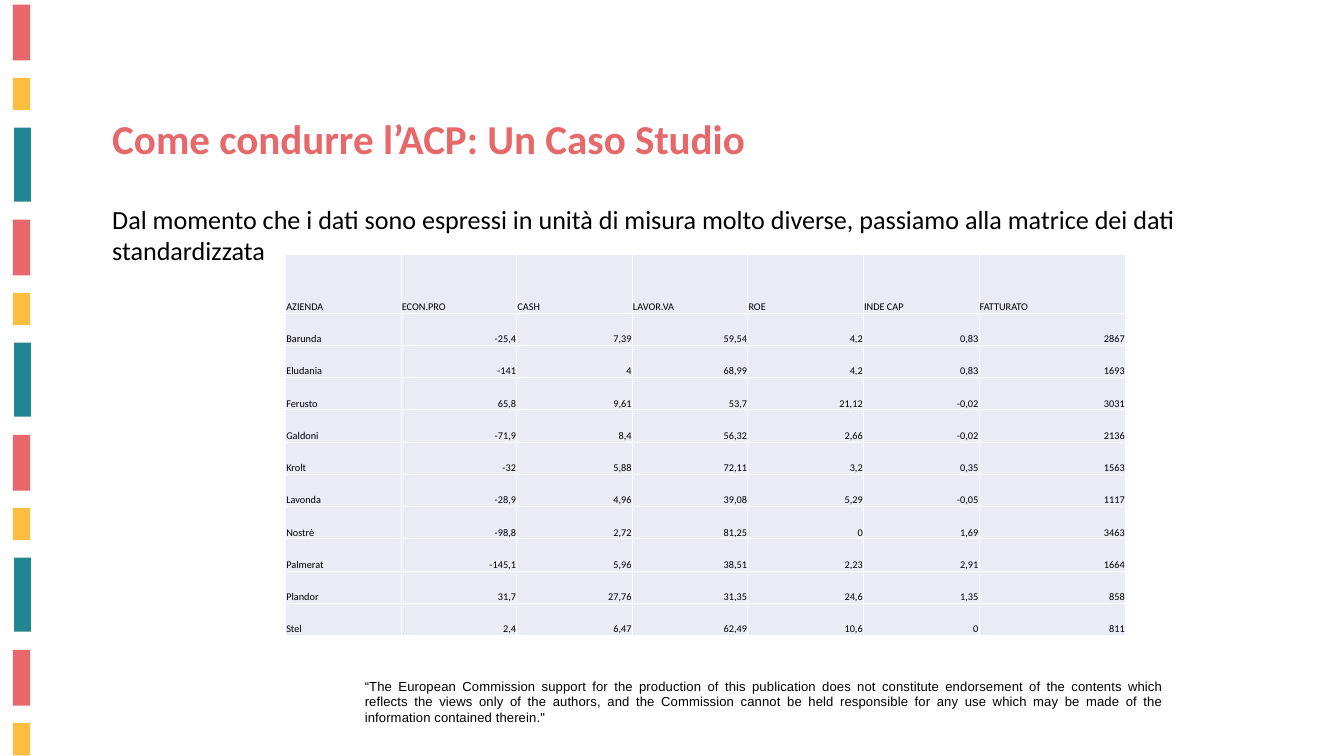
"""Build the slide that presents the company data matrix for the PCA case study."""
from dataclasses import dataclass

from lxml import etree
from pptx import Presentation
from pptx.dml.color import RGBColor
from pptx.enum.shapes import MSO_SHAPE
from pptx.enum.text import MSO_ANCHOR, MSO_AUTO_SIZE, PP_ALIGN
from pptx.oxml.ns import qn
from pptx.slide import Slide
from pptx.util import Inches, Pt

RECTANGLE = MSO_SHAPE.RECTANGLE
MIDDLE, BOTTOM, TOP = MSO_ANCHOR.MIDDLE, MSO_ANCHOR.BOTTOM, MSO_ANCHOR.TOP
LEFT, RIGHT, JUSTIFY = PP_ALIGN.LEFT, PP_ALIGN.RIGHT, PP_ALIGN.JUSTIFY
NO_AUTOFIT = MSO_AUTO_SIZE.NONE

BLACK = "000000"
CELL_FILL = "E9EBF5"
SLIDE_WIDTH, SLIDE_HEIGHT = 20, 11.25
STRIPE_PITCH = 3.2

TITLE = "Come condurre l’ACP: Un Caso Studio"
INTRO = (
    "Dal momento che i dati sono espressi in unità di misura molto diverse, "
    "passiamo alla matrice dei dati",
    "standardizzata",
)
DISCLAIMER = (
    "“The European Commission support for the production of this publication does not "
    "constitute endorsement of the contents which reflects the views only of the authors, "
    "and the Commission cannot be held responsible for any use which may be made of the "
    "information contained therein.\""
)

COLUMN_WIDTHS = [1.72] * 6 + [2.18]
HEADER_HEIGHT, ROW_HEIGHT = 0.87, 0.48
COMPANIES = [
    ("AZIENDA", "ECON.PRO", "CASH", "LAVOR.VA", "ROE", "INDE CAP", "FATTURATO"),
    ("Barunda", "-25,4", "7,39", "59,54", "4,2", "0,83", "2867"),
    ("Eludania", "-141", "4", "68,99", "4,2", "0,83", "1693"),
    ("Ferusto", "65,8", "9,61", "53,7", "21,12", "-0,02", "3031"),
    ("Galdoni", "-71,9", "8,4", "56,32", "2,66", "-0,02", "2136"),
    ("Krolt", "-32", "5,88", "72,11", "3,2", "0,35", "1563"),
    ("Lavonda", "-28,9", "4,96", "39,08", "5,29", "-0,05", "1117"),
    ("Nostrè", "-98,8", "2,72", "81,25", "0", "1,69", "3463"),
    ("Palmerat", "-145,1", "5,96", "38,51", "2,23", "2,91", "1664"),
    ("Plandor", "31,7", "27,76", "31,35", "24,6", "1,35", "858"),
    ("Stel", "2,4", "6,47", "62,49", "10,6", "0", "811"),
]


@dataclass(frozen=True)
class Stripe:
    left: float
    top: float
    width: float
    height: float
    color: str


STRIPES = [
    Stripe(0.19, 0.07, 0.26, 0.83, "E8676A"),
    Stripe(0.19, 1.16, 0.26, 0.48, "FDBD40"),
    Stripe(0.21, 1.9, 0.25, 1.1, "238791"),
]


def rgb(color: str) -> RGBColor:
    return RGBColor.from_string(color)


def style(paragraph, size: float, color: str = BLACK, align=LEFT,
          font: str = "Calibri", bold: bool = False) -> None:
    paragraph.alignment = align
    paragraph.font.name = font
    paragraph.font.size = Pt(size)
    paragraph.font.bold = bold
    paragraph.font.color.rgb = rgb(color)


def place(shape, left: float, top: float, width: float, height: float, anchor) -> None:
    shape.left, shape.top = Inches(left), Inches(top)
    shape.width, shape.height = Inches(width), Inches(height)
    shape.text_frame.word_wrap = True
    shape.text_frame.auto_size = NO_AUTOFIT
    shape.text_frame.vertical_anchor = anchor


def draw_stripe(slide: Slide, stripe: Stripe, offset: float) -> None:
    top = stripe.top + offset
    height = min(stripe.height, SLIDE_HEIGHT - top)
    band = slide.shapes.add_shape(RECTANGLE, Inches(stripe.left), Inches(top),
                                  Inches(stripe.width), Inches(height))
    band.shadow.inherit = False
    band.fill.solid()
    band.fill.fore_color.rgb = rgb(stripe.color)
    band.line.fill.background()


def draw_stripes(slide: Slide) -> None:
    for cycle in range(4):
        for stripe in STRIPES:
            offset = cycle * STRIPE_PITCH
            if stripe.top + offset < SLIDE_HEIGHT:
                draw_stripe(slide, stripe, offset)


def write_title(slide: Slide) -> None:
    title = slide.shapes.title
    place(title, 1.57, 1.64, 12.18, 0.84, MIDDLE)
    title.text_frame.text = TITLE
    style(title.text_frame.paragraphs[0], 44, "E7686A", bold=True)


def write_intro(slide: Slide) -> None:
    intro = slide.placeholders[1]
    place(intro, 1.57, 2.97, 16.17, 1.04, TOP)
    intro.text_frame.text = "\n".join(INTRO)
    for paragraph in intro.text_frame.paragraphs:
        properties = paragraph._p.get_or_add_pPr()
        properties.set("marL", "0")
        properties.set("indent", "0")
        etree.SubElement(properties, qn("a:buNone"))
        paragraph.space_before = Pt(0)
        style(paragraph, 28, align=JUSTIFY)


def write_disclaimer(slide: Slide) -> None:
    disclaimer = slide.shapes.add_textbox(0, 0, 0, 0)
    place(disclaimer, 5.33, 10.04, 12.08, 0.81, TOP)
    paragraph = disclaimer.text_frame.paragraphs[0]
    sentence = paragraph.add_run()
    sentence.text = DISCLAIMER
    sentence._r.get_or_add_rPr().set("spc", "10")
    style(paragraph, 14, align=JUSTIFY, font="Arial")


def fill_cell(cell, text: str, align) -> None:
    cell.fill.solid()
    cell.fill.fore_color.rgb = rgb(CELL_FILL)
    cell.vertical_anchor = BOTTOM
    cell.margin_left = cell.margin_right = cell.margin_top = Inches(0.01)
    cell.margin_bottom = 0
    cell.text = text
    style(cell.text_frame.paragraphs[0], 11, align=align)


def draw_matrix(slide: Slide) -> None:
    heights = [HEADER_HEIGHT] + [ROW_HEIGHT] * (len(COMPANIES) - 1)
    matrix = slide.shapes.add_table(
        len(heights), len(COLUMN_WIDTHS), Inches(4.25), Inches(3.79),
        Inches(sum(COLUMN_WIDTHS)), Inches(sum(heights))).table
    matrix.first_row = matrix.horz_banding = False
    for column, width in zip(matrix.columns, COLUMN_WIDTHS):
        column.width = Inches(width)
    for row, height in zip(matrix.rows, heights):
        row.height = Inches(height)
    for r, company in enumerate(COMPANIES):
        for c, text in enumerate(company):
            fill_cell(matrix.cell(r, c), text, RIGHT if r and c else LEFT)


def main() -> None:
    presentation = Presentation()
    presentation.slide_width = Inches(SLIDE_WIDTH)
    presentation.slide_height = Inches(SLIDE_HEIGHT)
    slide = presentation.slides.add_slide(presentation.slide_layouts[1])
    draw_stripes(slide)
    write_disclaimer(slide)
    write_title(slide)
    write_intro(slide)
    draw_matrix(slide)
    presentation.save("out.pptx")


if __name__ == "__main__":
    main()
